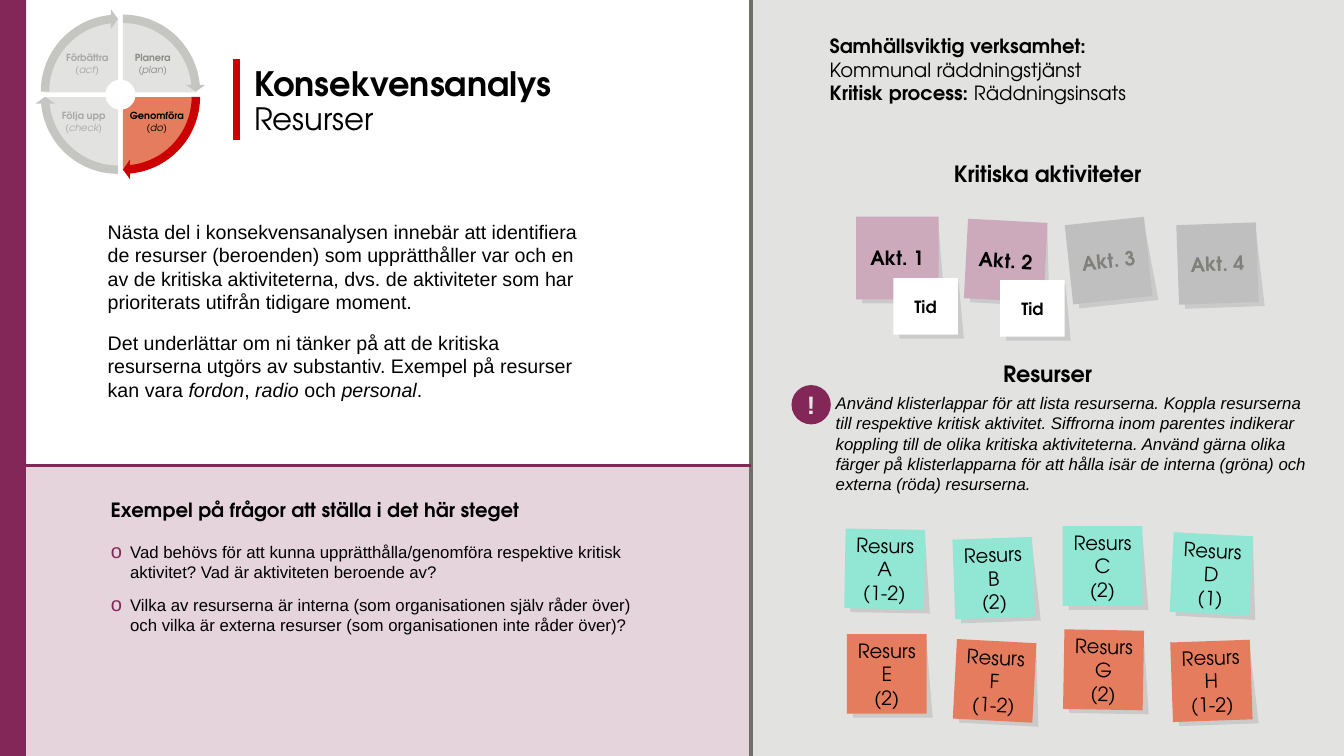
from copy import deepcopy
from math import cos, radians, sin

from pptx import Presentation
from pptx import util as u
from pptx.dml.color import RGBColor
from pptx.enum import shapes, text
from pptx.oxml.xmlchemy import OxmlElement

COLORS = {
    "black": "000000", "white": "FFFFFF", "plum": "822757", "mauve": "CDA9BC",
    "blush": "E6D4DD", "red": "CC0000", "coral": "E67C5E", "mint": "92E6D4",
    "panel": "E2E2E1", "divider": "6F6E67", "silver": "BFBFBF", "dim": "807F79",
    "arrow": "C5C5C2", "faded": "A9A8A4", "muted": "8C8B85", "mark": "E7E6E6",
}
HEADING, BODY = "TeX Gyre Adventor", "Arial"
CENTER, LEFT = text.PP_ALIGN.CENTER, text.PP_ALIGN.LEFT
WHEEL_X, WHEEL_Y = 1.195, 0.94


def inches(*values):
    return [u.Inches(value) for value in values]


def rgb(name):
    return RGBColor.from_string(COLORS[name])


def paint(shape, color):
    shape.shadow.inherit = False
    shape.fill.solid()
    shape.fill.fore_color.rgb = rgb(color)
    shape.line.fill.background()


def write(frame, paragraphs, size, font=HEADING, color="black", align=LEFT,
          after=0, spacing=1.0):
    for index, spans in enumerate(paragraphs):
        para = frame.paragraphs[0] if index == 0 else frame.add_paragraph()
        para.alignment = align
        para.space_before = u.Pt(0)
        para.space_after = u.Pt(after)
        para.line_spacing = spacing
        for words, style, *own_size in spans:
            span = para.add_run()
            span.text = words.rstrip("\n")
            span.font.size = u.Pt(own_size[0] if own_size else size)
            span.font.name = font
            span.font.bold = "b" in style
            span.font.italic = "i" in style
            span.font.color.rgb = rgb(color)
            if words.endswith("\n"):
                line_break = OxmlElement("a:br")
                line_break.append(deepcopy(span._r.rPr))
                span._r.addnext(line_break)


def add_text(owner, place, paragraphs, size, wrap=True, **look):
    box = owner.shapes.add_textbox(*inches(*place))
    box.text_frame.word_wrap = wrap
    write(box.text_frame, paragraphs, size, **look)


def add_block(owner, place, color, kind=shapes.MSO_SHAPE.RECTANGLE):
    block = owner.shapes.add_shape(kind, *inches(*place))
    paint(block, color)
    return block


def add_rule(page, start, end, color, width):
    rule = page.shapes.add_connector(
        shapes.MSO_CONNECTOR.STRAIGHT, *inches(*start, *end))
    rule.line.color.rgb = rgb(color)
    rule.line.width = u.Pt(width)
    rule._element.spPr.append(OxmlElement("a:effectLst"))


def add_outline(owner, points, color):
    points = [inches(*point) for point in points]
    builder = owner.shapes.build_freeform(*points[0], scale=1.0)
    builder.add_line_segments(points[1:], close=True)
    outline = builder.convert_to_shape()
    paint(outline, color)
    return outline


def fill_middle(block, paragraphs, size, inset, **look):
    frame = block.text_frame
    frame.word_wrap = True
    frame.vertical_anchor = text.MSO_ANCHOR.MIDDLE
    frame.margin_left = frame.margin_right = u.Inches(inset)
    frame.margin_top = frame.margin_bottom = u.Inches(min(inset, 0.05))
    write(frame, paragraphs, size, align=CENTER, **look)


def add_note(page, place, turn, fill, lines, style="", color="black", size=14, inset=0.1):
    left, top, width, height = place
    x, y = left + 0.06, top + 0.04
    group = page.shapes.add_group_shape()
    shade = add_outline(group, [(x, y), (x + 0.92 * width, y),
                                (x + width, y + height), (x, y + height)], "black")
    alpha = OxmlElement("a:alpha")
    alpha.set("val", "10000")
    shade.fill._xPr.solidFill[0].append(alpha)
    note = add_block(group, place, fill)
    shade.rotation = note.rotation = turn
    fill_middle(note, [[(line, style)] for line in lines], size, inset, color=color)


def add_wedge(group, side_x, side_y, color):
    gap, outer, inner = 0.023, 0.73, 0.15
    rim = [(gap + outer * cos(radians(a)), gap + outer * sin(radians(a)))
           for a in range(0, 91, 3)]
    hub = [(inner * cos(radians(a)), inner * sin(radians(a)))
           for a in range(81, 8, -6)]
    add_outline(group, [(WHEEL_X + side_x * x, WHEEL_Y + side_y * y)
                        for x, y in rim + hub], color)


def add_cycle(page):
    group = page.shapes.add_group_shape()
    for side_x, side_y, color in ((-1, -1, "panel"), (-1, 1, "panel"),
                                  (1, -1, "panel"), (1, 1, "coral")):
        add_wedge(group, side_x, side_y, color)
    for left, top, start, color in ((0.4, 0.09, 162, "arrow"), (0.4, 0.14, 0, "red"),
                                    (0.35, 0.14, 54, "arrow"), (0.35, 0.09, 108, "arrow")):
        arrow = add_block(group, (left, top, 1.64, 1.64), color,
                          shapes.MSO_SHAPE.CIRCULAR_ARROW)
        for index, value in enumerate((0.051, 3.275, start + 50.725, start, 0.059)):
            arrow.adjustments[index] = value
    for left, top, width, name, phase, color in (
            (0.55, 0.48, 0.63, "Förbättra", "(act)", "faded"),
            (0.51, 1.05, 0.64, "Följa upp", "(check)", "faded"),
            (1.18, 1.05, 0.75, "Genomföra", "(do)", "black"),
            (1.15, 0.48, 0.73, "Planera", "(plan)", "muted")):
        add_text(group, (left, top, width, 0.33), [[(name, "b")], [(phase, "i")]], 7,
                 wrap=False, color=color, align=CENTER, after=1, spacing=0.9)


def place_holder(holder, place):
    holder.left, holder.top, holder.width, holder.height = inches(*place)
    holder.text_frame.auto_size = text.MSO_AUTO_SIZE.NONE
    holder.text_frame.word_wrap = True


def add_bullets(frame):
    for para in frame.paragraphs:
        props = para._p.get_or_add_pPr()
        props.set("marL", str(u.Inches(0.19)))
        props.set("indent", str(-u.Inches(0.19)))
        tint, shade = OxmlElement("a:buClr"), OxmlElement("a:srgbClr")
        shade.set("val", COLORS["plum"])
        tint.append(shade)
        scale, sign = OxmlElement("a:buSzPct"), OxmlElement("a:buChar")
        scale.set("val", "120000")
        sign.set("char", "o")
        for part in (tint, scale, sign):
            props.append(part)


def add_left_side(page):
    title, questions = page.shapes.title, page.placeholders[1]
    place_holder(title, (2.42, 0.6, 4.23, 0.83))
    write(title.text_frame, [[("Konsekvensanalys\n", "b"), ("Resurser", "", 22)]],
          24, spacing=0.9)
    add_rule(page, (2.35, 0.59), (2.35, 1.39), "red", 5)
    add_text(page, (0.97, 2.13, 5.04, 1.92), [
        [("Nästa del i konsekvensanalysen innebär att identifiera de resurser (beroenden) som upprätthåller var och en av de kritiska aktiviteterna, dvs. de aktiviteter som har prioriterats utifrån tidigare moment.", "")],
        [("Det underlättar om ni tänker på att de kritiska resurserna utgörs av substantiv. Exempel på resurser kan vara ", ""),
         ("fordon", "i"), (", ", ""), ("radio ", "i"), ("och ", ""),
         ("personal", "i"), (".", "")]], 14, font=BODY, after=12)
    add_text(page, (1, 4.89, 4.3, 0.34),
             [[("Exempel på frågor att ställa i det här steget", "b")]], 14, wrap=False)
    place_holder(questions, (1, 5.32, 5.48, 1.04))
    write(questions.text_frame, [
        [("Vad behövs för att kunna upprätthålla/genomföra respektive kritisk aktivitet? Vad är aktiviteten beroende av?", "")],
        [("Vilka av resurserna är interna (som organisationen själv råder över) och vilka är externa resurser (som organisationen inte råder över)?", "")]],
        12, font=BODY, after=9)
    add_bullets(questions.text_frame)
    questions.element.getparent().append(questions.element)


def add_right_side(page):
    add_text(page, (8.13, 0.29, 3.97, 0.81), [[
        ("Samhällsviktig verksamhet:\n", "b"), ("Kommunal räddningstjänst\n", ""),
        ("Kritisk process: ", "b"), ("Räddningsinsats", "")]], 14)
    for top, heading in ((1.54, "Kritiska aktiviteter"), (3.52, "Resurser")):
        add_text(page, (8.19, top, 4.4, 0.37), [[(heading, "b")]], 16, align=CENTER)
    add_text(page, (8.19, 3.85, 4.98, 1.11), [[
        ("Använd klisterlappar för att lista resurserna. Koppla resurserna till respektive kritisk aktivitet. Siffrorna inom parentes indikerar koppling till de olika kritiska aktiviteterna. Använd gärna olika färger på klisterlapparna för att hålla isär de interna (gröna) och externa (röda) resurserna.", "i")]],
        12, font=BODY)
    badge = add_block(page, (7.85, 3.82, 0.39, 0.39), "plum", shapes.MSO_SHAPE.OVAL)
    fill_middle(badge, [[("!", "b")]], 18, 0, font=BODY, color="mark")
    for left, top, side, turn, fill, color, number in (
            (8.49, 2.15, 0.82, 0, "mauve", "black", 1),
            (9.58, 2.19, 0.79, 3, "mauve", "black", 2),
            (10.6, 2.19, 0.79, 353.9, "silver", "dim", 3),
            (11.68, 2.22, 0.79, 358, "silver", "dim", 4)):
        add_note(page, (left, top, side, side), turn, fill, [f"Akt. {number}"], "b", color)
    for left, top in ((8.86, 2.76), (9.92, 2.78)):
        add_note(page, (left, top, 0.64, 0.56), 0, "white", ["Tid"], "b", size=12, inset=0)
    for left, top, turn, fill, letter, links in (
            (8.38, 5.25, 1, "mint", "A", "1-2"), (9.46, 5.34, 358, "mint", "B", "2"),
            (10.54, 5.22, 0, "mint", "C", "2"), (11.62, 5.3, 3, "mint", "D", "1"),
            (8.4, 6.29, 0, "coral", "E", "2"), (9.47, 6.36, 3, "coral", "F", "1-2"),
            (10.55, 6.25, 1, "coral", "G", "2"), (11.62, 6.36, 358, "coral", "H", "1-2")):
        add_note(page, (left, top, 0.79, 0.79), turn, fill,
                 [f"Resurs {letter}", f"({links})"], inset=0.04 if letter == "A" else 0.1)


def main():
    deck = Presentation()
    deck.slide_width, deck.slide_height = inches(13.33, 7.5)
    page = deck.slides.add_slide(deck.slide_layouts[1])
    add_block(page, (0, 0, 0.26, 7.5), "plum")
    add_block(page, (7.45, 0, 5.88, 7.5), "panel")
    add_block(page, (0.26, 4.63, 7.2, 2.87), "blush")
    add_rule(page, (7.45, 0), (7.45, 7.5), "divider", 2.5)
    add_rule(page, (0.26, 4.62), (7.45, 4.62), "plum", 2.5)
    add_left_side(page)
    add_right_side(page)
    add_cycle(page)
    deck.save("out.pptx")


if __name__ == "__main__":
    main()
